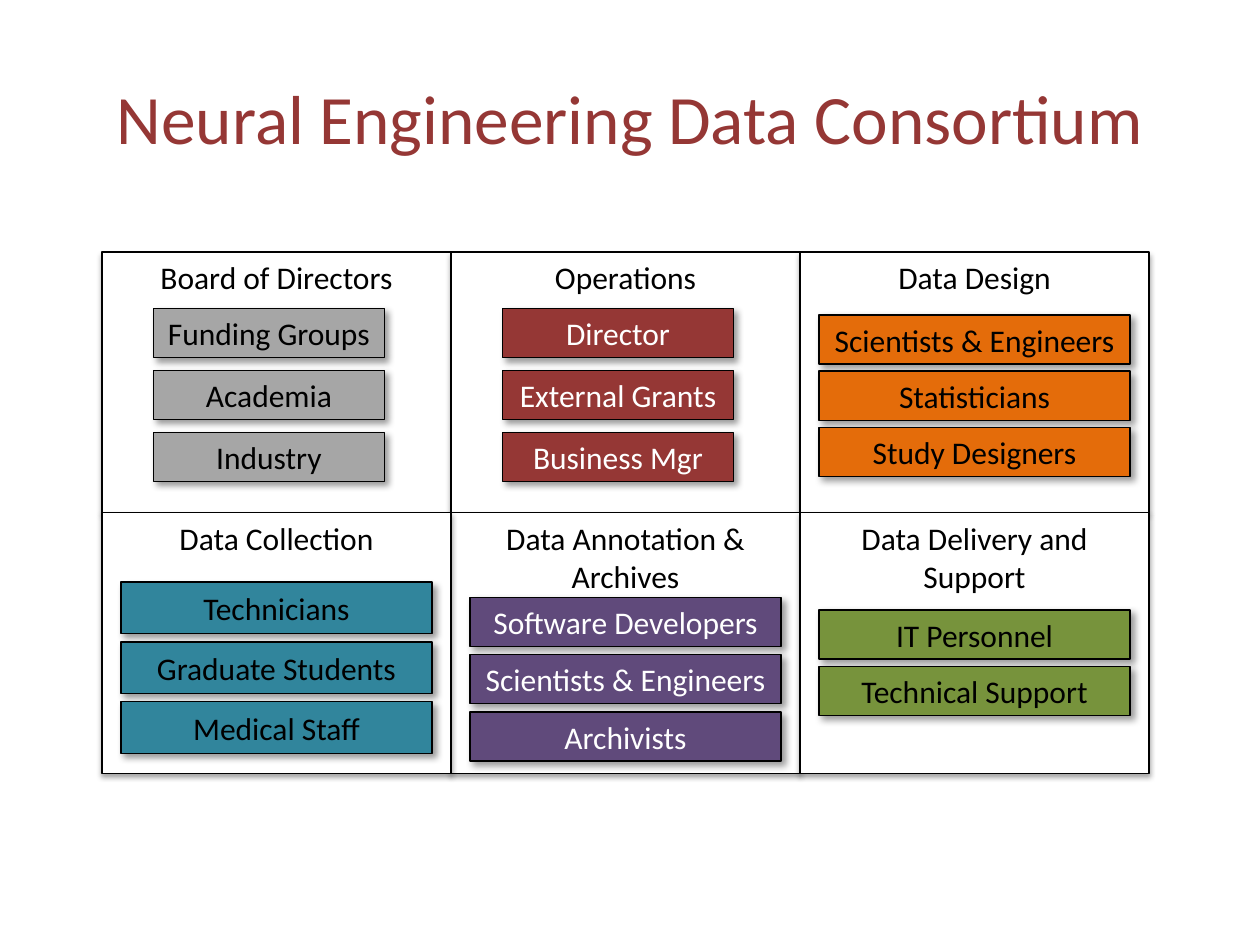
from dataclasses import dataclass

import lxml.etree
import pptx
import pptx.dml.color
import pptx.enum.shapes
import pptx.enum.text
import pptx.oxml.ns
import pptx.shapes.autoshape
import pptx.text.text
import pptx.util

Inches = pptx.util.Inches
PP_ALIGN = pptx.enum.text.PP_ALIGN
ANCHOR = pptx.enum.text.MSO_ANCHOR

COLORS = {
    "black": "000000", "white": "FFFFFF", "gray": "A6A6A6", "red": "953735",
    "orange": "E46C0A", "purple": "604A7B", "green": "77933C", "teal": "31859C",
}

# Grid of panels, in inches
GRID_LEFT, GRID_TOP = 0.81, 2.0
PANEL_W, PANEL_H = 2.77, 2.07


@dataclass(frozen=True)
class Shadow:
    alpha: int  # percent
    blur: float  # points
    dist: float  # points
    angle: int  # degrees


@dataclass(frozen=True)
class Panel:
    col: int
    row: int
    title: str
    roles: tuple[str, ...]
    fill: str
    inset: float  # roles' left offset within the panel
    first: float  # top of the first role
    pitch: float  # distance between role tops
    width: float = 2.47
    height: float = 0.39
    font: str = "black"


PANEL_SHADOW = Shadow(alpha=35, blur=3.1, dist=1.8, angle=90)
ROLE_SHADOW = Shadow(alpha=40, blur=4, dist=3, angle=45)

PANELS = [
    Panel(0, 0, "Board of Directors", ("Funding Groups", "Academia", "Industry"),
          "gray", 0.41, 2.45, 0.49, width=1.83),
    Panel(1, 0, "Operations", ("Director", "External Grants", "Business Mgr"),
          "red", 0.41, 2.45, 0.49, width=1.83, font="white"),
    Panel(2, 0, "Data Design", ("Scientists & Engineers", "Statisticians", "Study Designers"),
          "orange", 0.15, 2.5, 0.445),
    Panel(1, 1, "Data Annotation & Archives",
          ("Software Developers", "Scientists & Engineers", "Archivists"),
          "purple", 0.15, 4.74, 0.455, font="white"),
    Panel(2, 1, "Data Delivery and Support", ("IT Personnel", "Technical Support"),
          "green", 0.15, 4.84, 0.45),
    Panel(0, 1, "Data Collection", ("Technicians", "Graduate Students", "Medical Staff"),
          "teal", 0.15, 4.62, 0.475, height=0.41),
]


def rgb(name: str) -> pptx.dml.color.RGBColor:
    return pptx.dml.color.RGBColor.from_string(COLORS[name])


def write(tf: pptx.text.text.TextFrame, text: str, *, size: float = 18,
          color: str = "black", anchor: ANCHOR = ANCHOR.MIDDLE) -> None:
    """Fill a text frame with one centred, formatted paragraph."""
    tf.word_wrap = True
    tf.vertical_anchor = anchor
    p = tf.paragraphs[0]
    p.alignment = PP_ALIGN.CENTER
    r = p.add_run()
    r.text = text
    r.font.name = "Calibri"
    r.font.size = pptx.util.Pt(size)
    r.font.color.rgb = rgb(color)


def add_shadow(sp: pptx.shapes.autoshape.Shape, shadow: Shadow) -> None:
    qn = pptx.oxml.ns.qn
    sp.shadow.inherit = False
    effects = sp.element.spPr.find(qn("a:effectLst"))
    outer = lxml.etree.SubElement(
        effects, qn("a:outerShdw"),
        blurRad=str(pptx.util.Pt(shadow.blur)), dist=str(pptx.util.Pt(shadow.dist)),
        dir=str(shadow.angle * 60000), rotWithShape="0")
    clr = lxml.etree.SubElement(outer, qn("a:srgbClr"), val=COLORS["black"])
    lxml.etree.SubElement(clr, qn("a:alpha"), val=str(shadow.alpha * 1000))


def add_box(shapes, left: float, top: float, width: float, height: float,
            fill: str, shadow: Shadow) -> pptx.shapes.autoshape.Shape:
    sp = shapes.add_shape(pptx.enum.shapes.MSO_SHAPE.RECTANGLE, Inches(left),
                          Inches(top), Inches(width), Inches(height))
    sp.fill.solid()
    sp.fill.fore_color.rgb = rgb(fill)
    sp.line.color.rgb = rgb("black")
    sp.line.width = pptx.util.Pt(0.75)
    add_shadow(sp, shadow)
    return sp


def draw_panel(s, panel: Panel) -> None:
    """Draw a panel and its stack of roles as one group."""
    shapes = s.shapes.add_group_shape().shapes
    left = GRID_LEFT + panel.col * PANEL_W
    top = GRID_TOP + panel.row * PANEL_H
    frame = add_box(shapes, left, top, PANEL_W, PANEL_H, "white", PANEL_SHADOW)
    write(frame.text_frame, panel.title, anchor=ANCHOR.TOP)
    for i, role in enumerate(panel.roles):
        sp = add_box(shapes, left + panel.inset, panel.first + i * panel.pitch,
                     panel.width, panel.height, panel.fill, ROLE_SHADOW)
        write(sp.text_frame, role, color=panel.font)


def main() -> None:
    prs = pptx.Presentation()
    prs.slide_width, prs.slide_height = Inches(10), Inches(7.5)
    s = prs.slides.add_slide(prs.slide_layouts[5])

    # Title
    title = s.shapes.title
    title.left, title.top = Inches(0.5), Inches(0.3)
    title.width, title.height = Inches(9), Inches(1.25)
    write(title.text_frame, "Neural Engineering Data Consortium", size=39.6, color="red")

    # Panels
    for panel in PANELS:
        draw_panel(s, panel)

    prs.save("out.pptx")


if __name__ == "__main__":
    main()
